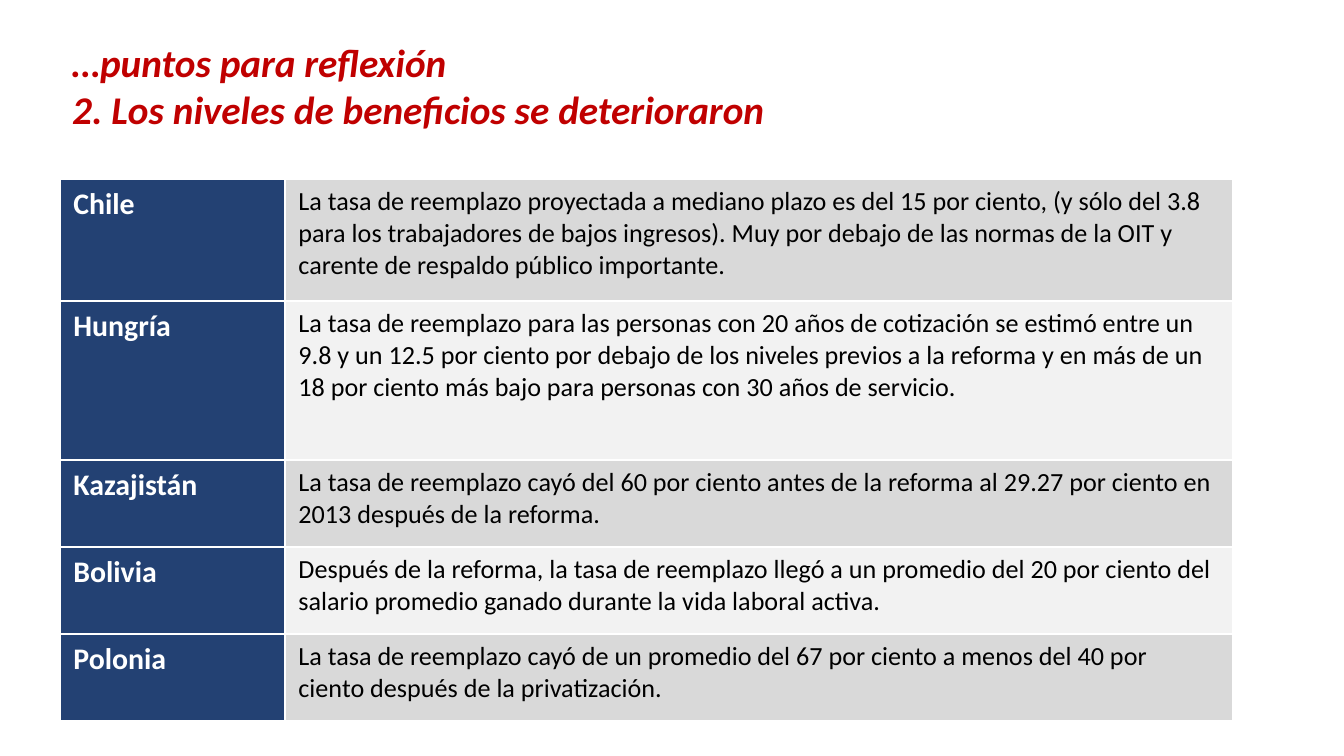
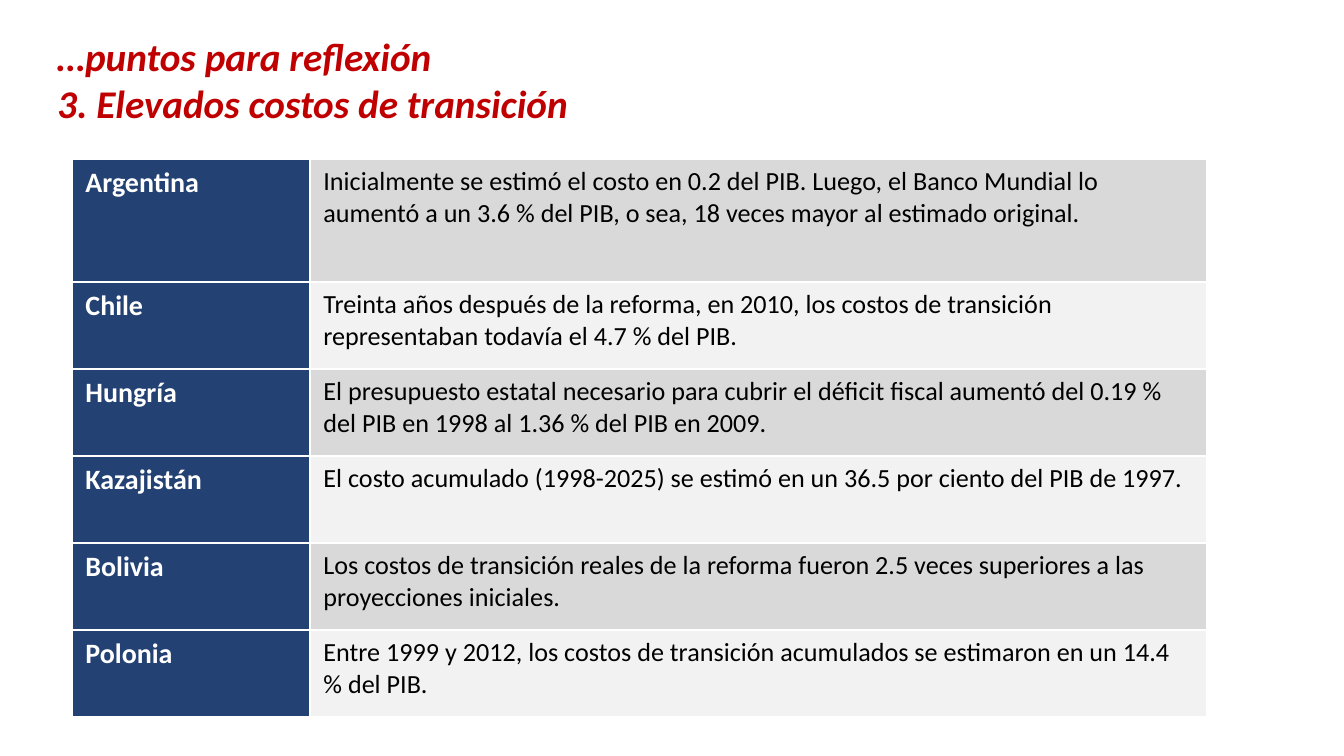
from dataclasses import dataclass

from lxml.etree import SubElement
from pptx import Presentation
from pptx.dml.color import RGBColor as Color
from pptx.enum.text import MSO_ANCHOR as Anchor
from pptx.oxml.ns import qn
from pptx.util import Emu, Pt

# Content: boxes are (left, top, width, height) in px; each row is (height, country, text)
SLIDES = [
    {
        "title": "…puntos para reflexión\n2. Los niveles de beneficios se deterioraron",
        "title_box": (59, 22, 989, 126),
        "table_at": (60, 179),
        "columns": (225, 948),
        "country_size": 16,
        "rows": [
            (122, "Chile",
             "La tasa de reemplazo proyectada a mediano plazo es del 15 por ciento, (y sólo del 3.8 "
             "para los trabajadores de bajos ingresos). Muy por debajo de las normas de la OIT y "
             "carente de respaldo público importante."),
            (159, "Hungría",
             "La tasa de reemplazo para las personas con 20 años de cotización se estimó entre un "
             "9.8 y un 12.5 por ciento por debajo de los niveles previos a la reforma y en más de un "
             "18 por ciento más bajo para personas con 30 años de servicio."),
            (87, "Kazajistán",
             "La tasa de reemplazo cayó del 60 por ciento antes de la reforma al 29.27 por ciento en "
             "2013 después de la reforma."),
            (87, "Bolivia",
             "Después de la reforma, la tasa de reemplazo llegó a un promedio del 20 por ciento del "
             "salario promedio ganado durante la vida laboral activa."),
            (87, "Polonia",
             "La tasa de reemplazo cayó de un promedio del 67 por ciento a menos del 40 por "
             "ciento después de la privatización."),
        ],
    },
    {
        "title": "…puntos para reflexión\n3. Elevados costos de transición",
        "title_box": (44, 34, 1113, 91),
        "table_at": (72, 159),
        "columns": (238, 897),
        "country_size": 15,
        "rows": [
            (123, "Argentina",
             "Inicialmente se estimó el costo en 0.2 del PIB. Luego, el Banco Mundial lo "
             "aumentó a un 3.6 % del PIB, o sea, 18 veces mayor al estimado original."),
            (87, "Chile",
             "Treinta años después de la reforma, en 2010, los costos de transición "
             "representaban todavía el 4.7 % del PIB."),
            (87, "Hungría",
             "El presupuesto estatal necesario para cubrir el déficit fiscal aumentó del 0.19 % "
             "del PIB en 1998 al 1.36 % del PIB en 2009."),
            (87, "Kazajistán",
             "El costo acumulado (1998-2025) se estimó en un 36.5 por ciento del PIB de 1997."),
            (87, "Bolivia",
             "Los costos de transición reales de la reforma fueron 2.5 veces superiores a las "
             "proyecciones iniciales."),
            (87, "Polonia",
             "Entre 1999 y 2012, los costos de transición acumulados se estimaron en un 14.4 "
             "% del PIB."),
        ],
    },
]


@dataclass(frozen=True)
class Theme:
    font: str = "Calibri"
    title: str = "C00000"
    country_fill: str = "234173"
    country_text: str = "FFFFFF"
    body_text: str = "000000"
    bands: tuple = ("D9D9D9", "F2F2F2")
    border: str = "FFFFFF"
    border_width: int = 1
    title_size: int = 21
    body_size: int = 14


THEME = Theme()
SLIDE_WIDTH, SLIDE_HEIGHT = 1344, 756
EMU_PER_PX = 914400 / 134.4


def px(length):
    return Emu(round(length * EMU_PER_PX))


def write(frame, text, size, color, bold=False, italic=False):
    para = frame.paragraphs[0]
    para.text = text
    font = para.font
    font.name, font.size = THEME.font, Pt(size)
    font.bold, font.italic = bold, italic
    font.color.rgb = Color.from_string(color)


def add_title(page, text, area):
    box = page.shapes.add_textbox(*map(px, area))
    frame = box.text_frame
    frame.word_wrap = True
    frame.vertical_anchor = Anchor.MIDDLE
    write(frame, text, THEME.title_size, THEME.title, bold=True, italic=True)


def style_cell(cell, fill):
    # Borders come before the fill in the cell properties
    properties = cell._tc.get_or_add_tcPr()
    for side in ("lnL", "lnR", "lnT", "lnB"):
        line = SubElement(properties, qn(f"a:{side}"), w=str(Pt(THEME.border_width)))
        solid = SubElement(line, qn("a:solidFill"))
        SubElement(solid, qn("a:srgbClr"), val=THEME.border)
    cell.fill.solid()
    cell.fill.fore_color.rgb = Color.from_string(fill)


def add_country_table(page, content):
    rows, columns = content["rows"], content["columns"]
    size = (sum(columns), sum(height for height, _, _ in rows))
    area = map(px, content["table_at"] + size)
    table = page.shapes.add_table(len(rows), len(columns), *area).table
    table.first_row = table.horz_banding = False
    for column, width in zip(table.columns, columns):
        column.width = px(width)

    for index, (height, country, text) in enumerate(rows):
        table.rows[index].height = px(height)
        name_cell, text_cell = table.cell(index, 0), table.cell(index, 1)
        style_cell(name_cell, THEME.country_fill)
        style_cell(text_cell, THEME.bands[index % len(THEME.bands)])
        write(name_cell.text_frame, country, content["country_size"],
              THEME.country_text, bold=True)
        write(text_cell.text_frame, text, THEME.body_size, THEME.body_text)


def main():
    deck = Presentation()
    deck.slide_width, deck.slide_height = px(SLIDE_WIDTH), px(SLIDE_HEIGHT)
    blank = deck.slide_layouts[6]
    for content in SLIDES:
        page = deck.slides.add_slide(blank)
        add_title(page, content["title"], content["title_box"])
        add_country_table(page, content)
    deck.save("out.pptx")


if __name__ == "__main__":
    main()
